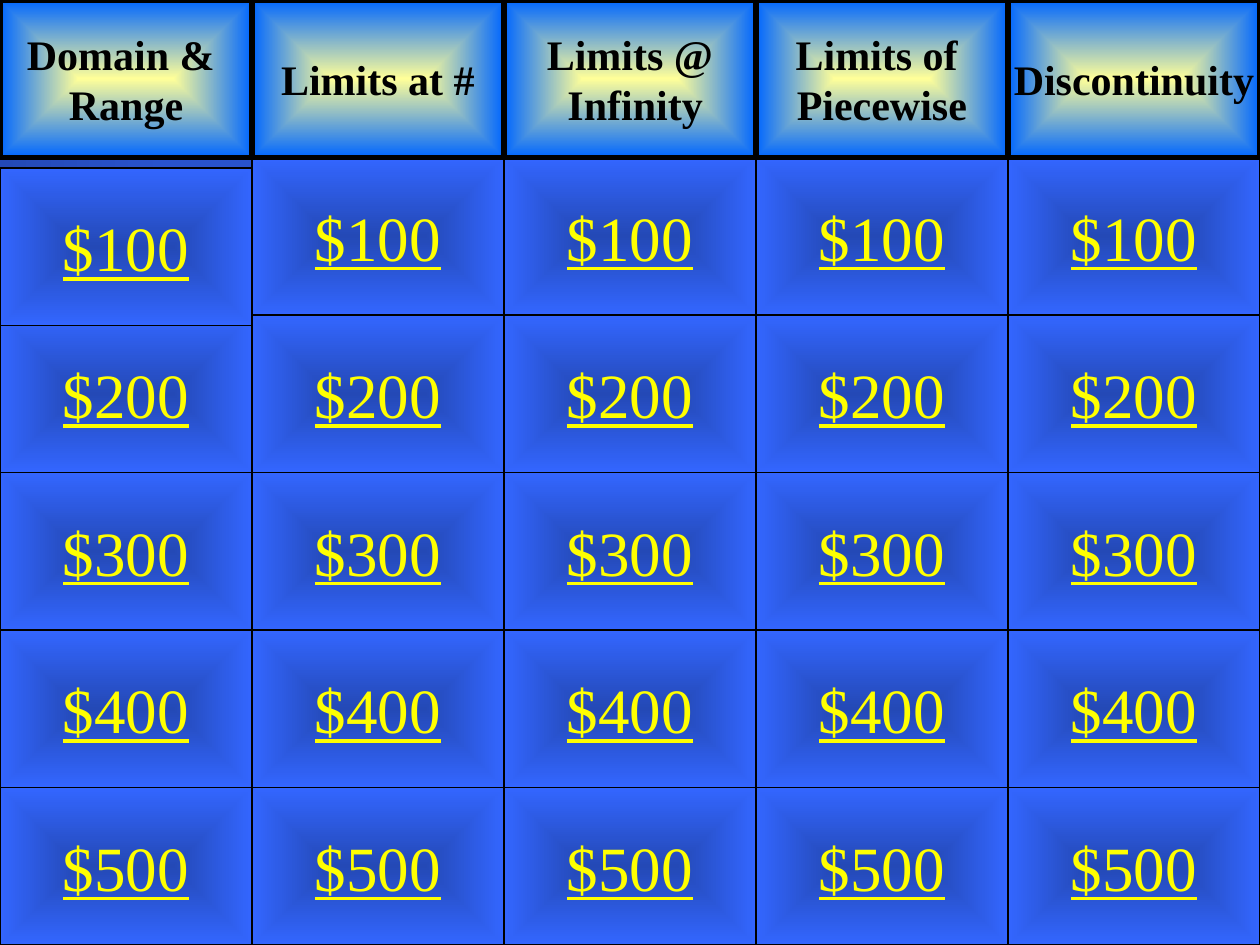
from dataclasses import dataclass

from lxml.etree import SubElement
from pptx import Presentation
from pptx.dml.color import RGBColor
from pptx.enum.shapes import MSO_SHAPE as Preset
from pptx.enum.text import MSO_ANCHOR as Anchor, PP_ALIGN as Align
from pptx.oxml.ns import qn
from pptx.util import Cm, Pt

BLACK = RGBColor(0x00, 0x00, 0x00)
YELLOW = RGBColor(0xFF, 0xFF, 0x00)
PALE_YELLOW = RGBColor(0xFF, 0xFF, 0x99)
BRIGHT_BLUE = RGBColor(0x00, 0x66, 0xFF)
ROYAL_BLUE = RGBColor(0x33, 0x66, 0xFF)
DEEP_BLUE = RGBColor(0x24, 0x49, 0xB6)

BOARD_WIDTH, BOARD_HEIGHT = 25.4, 19.05
CATEGORIES = [
    ["Domain & ", "Range"],
    ["Limits at #"],
    ["Limits @", " Infinity"],
    ["Limits of ", "Piecewise"],
    ["Discontinuity"],
]
PRIZES = ["$100", "$200", "$300", "$400", "$500"]
CELL_WIDTH = BOARD_WIDTH / len(CATEGORIES)
CELL_HEIGHT = BOARD_HEIGHT / (len(PRIZES) + 1)
FIRST_PRIZE_DROP = 0.21


@dataclass(frozen=True)
class Style:
    preset: Preset
    center: RGBColor
    edge: RGBColor
    gradient: str
    border: float
    ink: RGBColor
    font: dict


@dataclass(frozen=True)
class Cell:
    column: int
    row: int
    lines: list[str]
    style: Style
    drop: float = 0


CATEGORY = Style(Preset.RECTANGLE, PALE_YELLOW, BRIGHT_BLUE, "shape", 3, BLACK,
                 {"name": "Times New Roman", "size": Pt(24), "bold": True})
PRIZE = Style(Preset.ACTION_BUTTON_CUSTOM, DEEP_BLUE, ROYAL_BLUE, "rect", 0.75, YELLOW,
              {"name": "Times New Roman", "size": Pt(36), "underline": True})


def fill_from_center(fill, element, center: RGBColor, edge: RGBColor, gradient: str) -> None:
    fill.gradient()
    for stop, color in zip(fill.gradient_stops, (center, edge)):
        stop.color.rgb = color
    for stop, position in zip(fill.gradient_stops, (0, 1)):
        stop.position = position
    grad = next(element.iter(qn("a:gradFill")))
    linear = grad.find(qn("a:lin"))
    if linear is not None:
        grad.remove(linear)
    radial = SubElement(grad, qn("a:path"))
    radial.set("path", gradient)
    focus = SubElement(radial, qn("a:fillToRect"))
    for side in "ltrb":
        focus.set(side, "50000")


def draw_cell(slide, cell: Cell) -> None:
    style = cell.style
    box = slide.shapes.add_shape(
        style.preset,
        Cm(cell.column * CELL_WIDTH), Cm(cell.row * CELL_HEIGHT + cell.drop),
        Cm(CELL_WIDTH), Cm(CELL_HEIGHT))
    box.shadow.inherit = False
    fill_from_center(box.fill, box._element.spPr, style.center, style.edge, style.gradient)
    box.line.color.rgb = BLACK
    box.line.width = Pt(style.border)
    frame = box.text_frame
    frame.word_wrap = False
    frame.vertical_anchor = Anchor.MIDDLE
    frame.text = "\n".join(cell.lines)
    for paragraph in frame.paragraphs:
        paragraph.alignment = Align.CENTER
        for run in paragraph.runs:
            run.font.color.rgb = style.ink
            for attribute, value in style.font.items():
                setattr(run.font, attribute, value)


def main() -> None:
    deck = Presentation()
    deck.slide_width, deck.slide_height = Cm(BOARD_WIDTH), Cm(BOARD_HEIGHT)
    board = deck.slides.add_slide(deck.slide_layouts[6])
    fill_from_center(board.background.fill, board._element, ROYAL_BLUE, DEEP_BLUE, "shape")

    prizes = [Cell(column, row, [prize], PRIZE)
              for column in range(len(CATEGORIES))
              for row, prize in enumerate(PRIZES, 1)]
    dropped_prize = Cell(0, 1, [PRIZES[0]], PRIZE, FIRST_PRIZE_DROP)
    categories = [Cell(column, 0, lines, CATEGORY)
                  for column, lines in enumerate(CATEGORIES)]
    for cell in [*prizes[1:], dropped_prize, *categories]:
        draw_cell(board, cell)

    deck.save("out.pptx")


if __name__ == "__main__":
    main()
